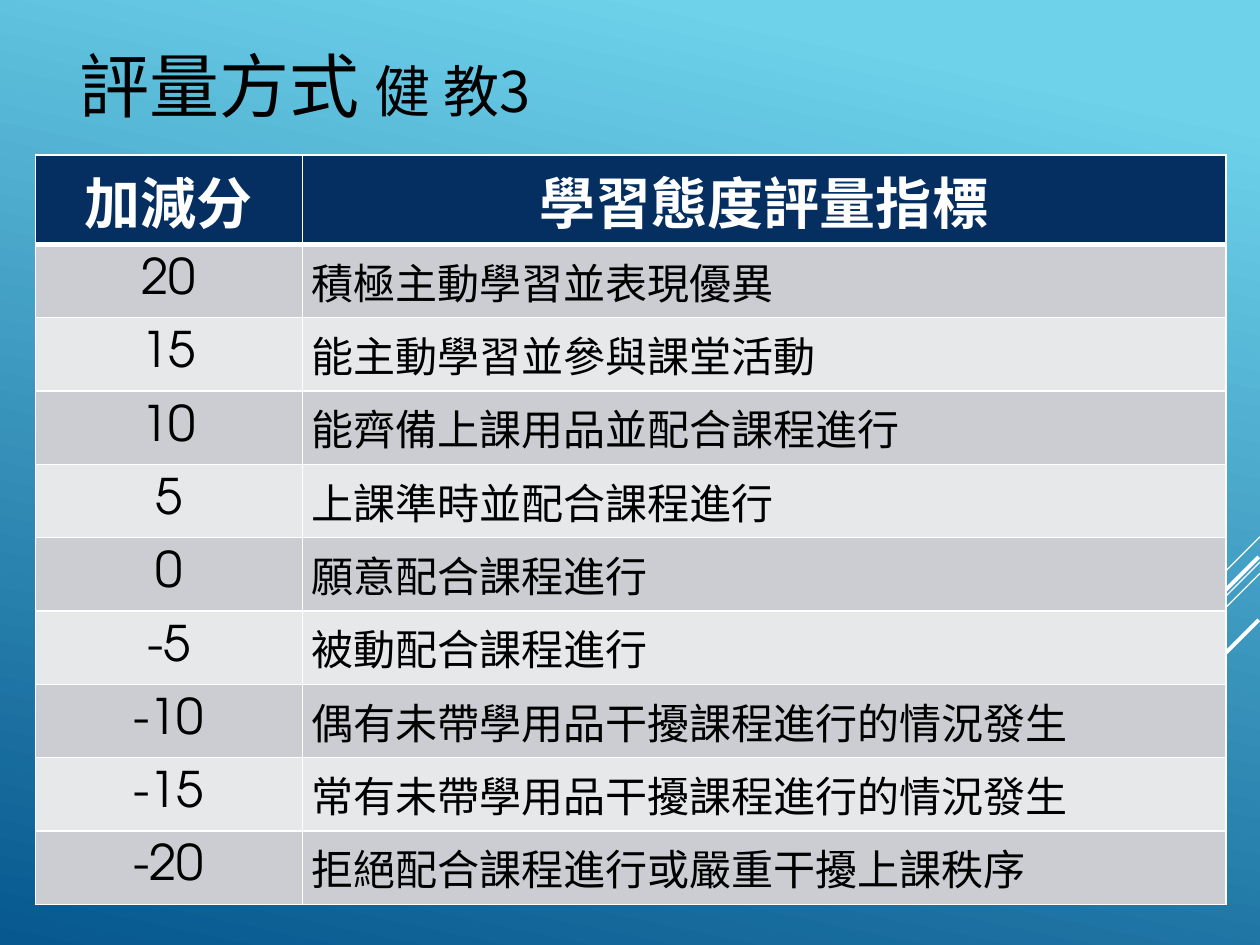
from lxml.etree import SubElement
from pptx import Presentation
from pptx.dml.color import RGBColor
from pptx.enum.shapes import MSO_CONNECTOR as Connector
from pptx.enum.text import MSO_ANCHOR as Anchor, MSO_AUTO_SIZE as AutoSize, PP_ALIGN as Align
from pptx.oxml.ns import qn
from pptx.util import Inches, Pt

WHITE = RGBColor(0xFF, 0xFF, 0xFF)
BLACK = RGBColor(0, 0, 0)
NAVY = RGBColor(0x05, 0x2F, 0x61)
SKY = RGBColor(0x6E, 0xD2, 0xEB)
OCEAN = RGBColor(0x06, 0x58, 0x8E)
DARK_BAND = RGBColor(0xCC, 0xCD, 0xD2)
LIGHT_BAND = RGBColor(0xE7, 0xE8, 0xEA)
LATIN_FONT = "TeX Gyre Adventor"
CJK_FONT = "Noto Sans CJK JP"

HEADER = ("加減分", "學習態度評量指標")
CRITERIA = [
    ("20", "積極主動學習並表現優異"),
    ("15", "能主動學習並參與課堂活動"),
    ("10", "能齊備上課用品並配合課程進行"),
    ("5", "上課準時並配合課程進行"),
    ("0", "願意配合課程進行"),
    ("-5", "被動配合課程進行"),
    ("-10", "偶有未帶學用品干擾課程進行的情況發生"),
    ("-15", "常有未帶學用品干擾課程進行的情況發生"),
    ("-20", "拒絕配合課程進行或嚴重干擾上課秩序"),
]
STREAKS = [
    (10, 4.26, 9.17, 5.09, 0.75),
    (10, 4.46, 7.3, 7.17, 0.75),
    (10, 4.55, 8.28, 6.27, 0.75),
    (9.99, 4.42, 8.42, 5.99, 2.25),
    (9.99, 4.92, 8.85, 6.06, 2.25),
]


def add_span(para, text, size, color=BLACK, bold=False, font=LATIN_FONT):
    """Append formatted text to a paragraph."""
    span = para.add_run()
    span.text = text
    span.font.size = Pt(size)
    span.font.bold = bold
    span.font.name = font
    span.font.color.rgb = color
    SubElement(span.font._element, qn("a:ea"), typeface=CJK_FONT)


def paint_background(page):
    """Fill the page with a slanted blue gradient."""
    fill = page.background.fill
    fill.gradient()
    fill.gradient_angle = 258
    for stop, color, position in zip(fill.gradient_stops, (SKY, OCEAN), (0.1, 1)):
        stop.color.rgb = color
        stop.position = position


def add_streak(page, x1, y1, x2, y2, width):
    """Draw one white diagonal line."""
    streak = page.shapes.add_connector(
        Connector.STRAIGHT, Inches(x1), Inches(y1), Inches(x2), Inches(y2))
    streak.line.color.rgb = WHITE
    streak.line.width = Pt(width)
    SubElement(streak._element.spPr, qn("a:effectLst"))


def add_title(page):
    """Place and fill the title."""
    title = page.shapes.title
    title.left, title.top = Inches(0.28), Inches(0.29)
    title.width, title.height = Inches(6.69), Inches(0.77)
    frame = title.text_frame
    frame.auto_size = AutoSize.NONE
    frame.word_wrap = True
    frame.vertical_anchor = Anchor.TOP
    frame.margin_left = Inches(0.35)
    para = frame.paragraphs[0]
    para.alignment = Align.LEFT
    add_span(para, "評量方式 ", 40, font=CJK_FONT)
    add_span(para, "健 教3", 32, font=CJK_FONT)


def set_borders(cell, **widths):
    """Give a cell white borders of the given widths in points."""
    for side, width in widths.items():
        border = SubElement(cell._tc.get_or_add_tcPr(), qn(f"a:ln{side}"), w=str(Pt(width)))
        fill = SubElement(border, qn("a:solidFill"))
        SubElement(fill, qn("a:srgbClr"), val=str(WHITE))


def fill_cell(cell, text, fill, align, bottom=1, top=1, **style):
    """Write and format one table cell."""
    set_borders(cell, L=1, R=1, T=top, B=bottom)
    cell.fill.solid()
    cell.fill.fore_color.rgb = fill
    cell.vertical_anchor = Anchor.MIDDLE
    cell.margin_left = cell.margin_right = Inches(0.07)
    cell.margin_top = cell.margin_bottom = 0
    para = cell.text_frame.paragraphs[0]
    para.alignment = align
    add_span(para, text, **style)


def add_criteria_table(page):
    """Build the table of score changes and attitude criteria."""
    table = page.shapes.add_table(
        len(CRITERIA) + 1, 2, Inches(0.28), Inches(1.23), Inches(9.45), Inches(5.95)).table
    for column, width in zip(table.columns, (2.12, 7.33)):
        column.width = Inches(width)
    header_height = 0.71
    table.rows[0].height = Inches(header_height)
    for column, text in enumerate(HEADER):
        fill_cell(table.cell(0, column), text, NAVY, Align.CENTER, bottom=3,
                  size=32, color=WHITE, bold=True)
    for row, (score, criterion) in enumerate(CRITERIA, 1):
        table.rows[row].height = Inches((5.95 - header_height) / len(CRITERIA))
        band = DARK_BAND if row % 2 else LIGHT_BAND
        top = 3 if row == 1 else 1
        fill_cell(table.cell(row, 0), score, band, Align.CENTER, top=top, size=28)
        fill_cell(table.cell(row, 1), criterion, band, Align.LEFT, top=top, size=24)


def main():
    """Build and save the deck."""
    deck = Presentation()
    deck.slide_width, deck.slide_height = Inches(10), Inches(7.5)
    page = deck.slides.add_slide(deck.slide_layouts[5])
    paint_background(page)
    for streak in STREAKS:
        add_streak(page, *streak)
    add_criteria_table(page)
    add_title(page)
    deck.save("out.pptx")


if __name__ == "__main__":
    main()
